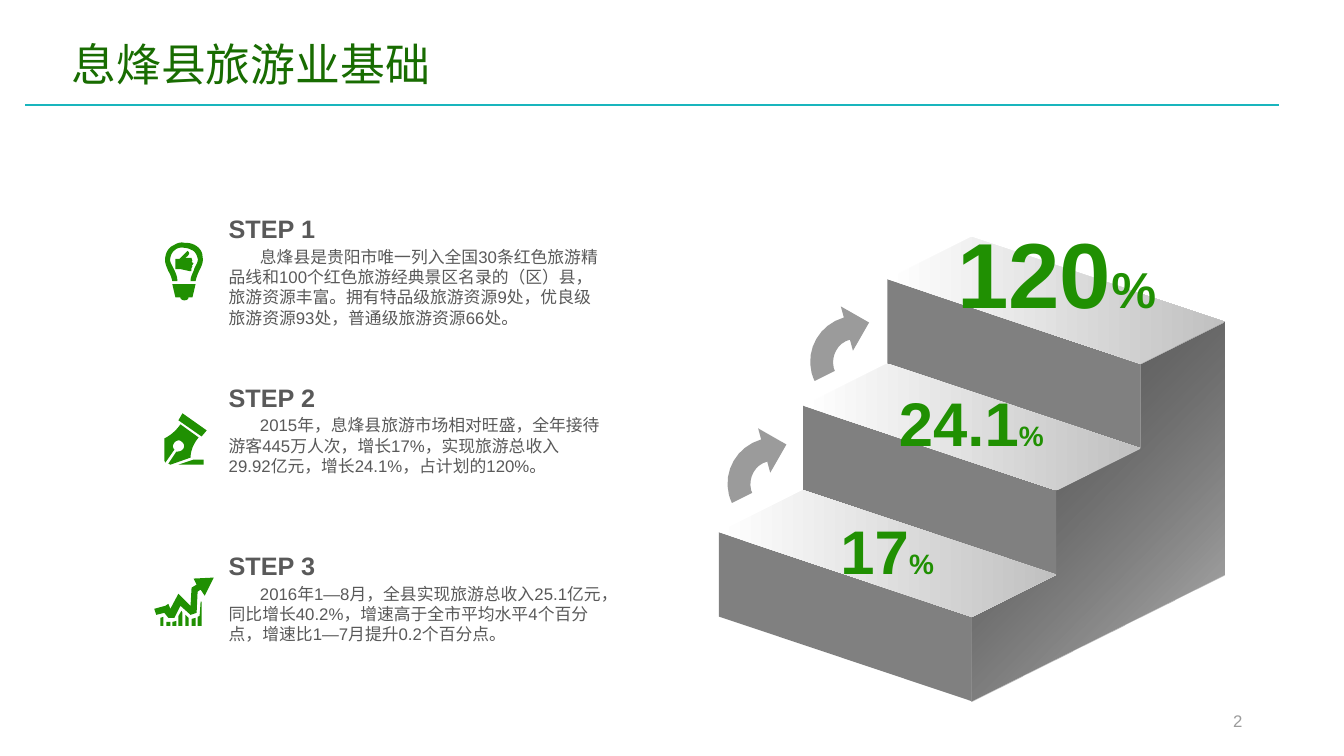
from lxml.etree import SubElement
from pptx import Presentation
from pptx.dml.color import RGBColor
from pptx.enum.shapes import MSO_CONNECTOR as Connector
from pptx.enum.text import MSO_ANCHOR as Anchor, PP_ALIGN as Align
from pptx.oxml.ns import qn
from pptx.util import Inches, Pt

COLORS = {
    "title": "186C01", "rule": "19B5BD", "green": "209002", "text": "595959",
    "riser": "808080", "arrow": "9B9B9B", "side": "595959", "side_end": "C2C2C2",
    "tread": "FFFFFF", "tread_end": "C0C0C0",
}
FONT = "Arial"
TITLE = "息烽县旅游业基础"
PAGE_NUMBER = "2"

STEPS = [
    ("STEP 1", "息烽县是贵阳市唯一列入全国30条红色旅游精品线和100个红色旅游经典景区名录的（区）县，"
               "旅游资源丰富。拥有特品级旅游资源9处，优良级旅游资源93处，普通级旅游资源66处。"),
    ("STEP 2", "2015年，息烽县旅游市场相对旺盛，全年接待游客445万人次，增长17%，"
               "实现旅游总收入29.92亿元，增长24.1%，占计划的120%。"),
    ("STEP 3", "2016年1—8月，全县实现旅游总收入25.1亿元，同比增长40.2%，"
               "增速高于全市平均水平4个百分点，增速比1—7月提升0.2个百分点。"),
]
FIGURES = [
    ("120", 66, 36, (9.38, 2.09, 2.2, 1.21)),
    ("24.1", 44, 20, (8.81, 3.77, 1.65, 0.84)),
    ("17", 44, 20, (8.23, 5.04, 1.14, 0.84)),
]

STAIR_COUNT = 3
STAIR_START = (7.13, 5.28)
STAIR_WIDTH = (2.51, 0.84)
STAIR_DEPTH = (0.836, -0.418)
STAIR_RISE = 0.837

ARROW = [
    (7.61, 4.58), (7.49, 4.61, 7.42, 4.74, 7.45, 4.86), (7.45, 4.87, 7.46, 4.88, 7.46, 4.89),
    (7.26, 4.99), (7.25, 4.97, 7.24, 4.94, 7.23, 4.91), (7.17, 4.67, 7.31, 4.43, 7.55, 4.36),
    (7.52, 4.25), (7.8, 4.41), (7.64, 4.69),
]
ARROW_SHIFTS = [(0, 0), (0.82, -1.21)]

BULB = [
    [(1.71, 2.82), (1.94, 2.82), (1.91, 2.95), (1.87, 2.95), (1.87, 2.97, 1.85, 2.98, 1.83, 2.98),
     (1.81, 2.98, 1.79, 2.97, 1.79, 2.95), (1.74, 2.95)],
    [(1.9, 2.56), (1.91, 2.59), (1.9, 2.6), (1.92, 2.61), (1.91, 2.63), (1.9, 2.63), (1.91, 2.64),
     (1.9, 2.66), (1.9, 2.69), (1.88, 2.69), (1.79, 2.67), (1.74, 2.67), (1.74, 2.57),
     (1.78, 2.57), (1.86, 2.49), (1.9, 2.51, 1.86, 2.55, 1.83, 2.56)],
    [(1.71, 2.79), (1.76, 2.79), (1.76, 2.74, 1.74, 2.7, 1.72, 2.66),
     (1.7, 2.62, 1.68, 2.59, 1.69, 2.56), (1.7, 2.51, 1.72, 2.49, 1.75, 2.47),
     (1.77, 2.46, 1.8, 2.45, 1.83, 2.46), (1.86, 2.46, 1.88, 2.47, 1.9, 2.48),
     (1.93, 2.49, 1.95, 2.52, 1.96, 2.56), (1.97, 2.59, 1.95, 2.62, 1.93, 2.66),
     (1.92, 2.7, 1.89, 2.74, 1.89, 2.79), (1.94, 2.79), (1.95, 2.75, 1.96, 2.72, 1.98, 2.68),
     (2, 2.64, 2.02, 2.6, 2.01, 2.55), (2.01, 2.49, 1.97, 2.45, 1.93, 2.43),
     (1.89, 2.41, 1.86, 2.41, 1.83, 2.41), (1.8, 2.4, 1.76, 2.41, 1.73, 2.43),
     (1.68, 2.45, 1.65, 2.49, 1.64, 2.55), (1.63, 2.6, 1.65, 2.64, 1.67, 2.69),
     (1.69, 2.72, 1.7, 2.75, 1.71, 2.79)],
]
PEN = [
    [(1.64, 4.59), (1.63, 4.57), (1.63, 4.35), (1.69, 4.32, 1.74, 4.28, 1.79, 4.21), (1.97, 4.34),
     (1.92, 4.4, 1.89, 4.47, 1.89, 4.54), (1.69, 4.61), (1.67, 4.6), (1.75, 4.48),
     (1.77, 4.48, 1.8, 4.48, 1.82, 4.45), (1.83, 4.43, 1.83, 4.4, 1.8, 4.38),
     (1.78, 4.36, 1.75, 4.37, 1.73, 4.39), (1.71, 4.42, 1.71, 4.44, 1.73, 4.46)],
    [(1.77, 4.61), (2.02, 4.61), (2.02, 4.56), (1.92, 4.56)],
    [(2, 4.33), (2.05, 4.27), (1.81, 4.1), (1.77, 4.17)],
]
GROWTH = [
    [(2.12, 5.73), (2.03, 5.91), (1.99, 5.85), (1.96, 5.87), (1.95, 6.08), (1.89, 6.1),
     (1.79, 6.01), (1.73, 6.13), (1.67, 6.13), (1.63, 6.08), (1.55, 6.1), (1.53, 6.04),
     (1.64, 6.01), (1.67, 5.99), (1.69, 6.04), (1.77, 5.89), (1.89, 6.01), (1.9, 5.83),
     (1.95, 5.8), (1.92, 5.74)],
    [(1.59, 6.21), (1.62, 6.21), (1.62, 6.12), (1.59, 6.13)],
    [(1.65, 6.21), (1.69, 6.21), (1.69, 6.17), (1.65, 6.17)],
    [(1.71, 6.21), (1.75, 6.21), (1.75, 6.16), (1.71, 6.17)],
    [(1.77, 6.21), (1.81, 6.21), (1.81, 6.08), (1.8, 6.06), (1.77, 6.11)],
    [(1.84, 6.21), (1.87, 6.21), (1.87, 6.13), (1.84, 6.1)],
    [(1.9, 6.21), (1.94, 6.21), (1.94, 6.13), (1.9, 6.14)],
    [(1.96, 6.21), (2, 6.21), (2, 5.97), (1.99, 5.97), (1.98, 6.11), (1.96, 6.12)],
]


def rgb(name):
    return RGBColor.from_string(COLORS[name])


def shift(point, *moves):
    return tuple(sum(values) for values in zip(point, *moves))


def flatten(outline, pieces=8):
    points = []
    for entry in outline:
        if len(entry) == 2:
            points.append(entry)
            continue
        controls = [points[-1], entry[:2], entry[2:4], entry[4:]]
        for index in range(1, pieces + 1):
            t = index / pieces
            weights = ((1 - t) ** 3, 3 * t * (1 - t) ** 2, 3 * t * t * (1 - t), t ** 3)
            points.append(tuple(sum(w * c[axis] for w, c in zip(weights, controls))
                                for axis in (0, 1)))
    return points


def add_outline(slide, outlines, color, end_color=None, angle=0, clear_start=False):
    builder = None
    for outline in outlines:
        points = [(Inches(x), Inches(y)) for x, y in flatten(outline)]
        if builder is None:
            builder = slide.shapes.build_freeform(*points[0])
        else:
            builder.move_to(*points[0])
        builder.add_line_segments(points[1:], close=True)
    shape = builder.convert_to_shape()
    shape.shadow.inherit = False
    shape.line.fill.background()
    if end_color is None:
        shape.fill.solid()
        shape.fill.fore_color.rgb = rgb(color)
        return
    shape.fill.gradient()
    shape.fill.gradient_angle = angle
    for stop, name in zip(shape.fill.gradient_stops, (color, end_color)):
        stop.color.rgb = rgb(name)
    if clear_start:
        first_color = next(shape.element.iter(qn("a:srgbClr")))
        SubElement(first_color, qn("a:alpha"), val="0")


def add_text(slide, box, runs, color, bold=False, wrap=False, align=Align.LEFT,
             anchor=Anchor.TOP, indent=0):
    frame = slide.shapes.add_textbox(*map(Inches, box)).text_frame
    frame.word_wrap = wrap
    frame.vertical_anchor = anchor
    paragraph = frame.paragraphs[0]
    paragraph.alignment = align
    if indent:
        properties = paragraph._p.get_or_add_pPr()
        properties.set("marL", "0")
        properties.set("indent", str(Inches(indent)))
    for text, size in runs:
        run = paragraph.add_run()
        run.text = text
        run.font.name = FONT
        run.font.size = Pt(size)
        run.font.bold = bold
        run.font.color.rgb = rgb(color)
    return paragraph


def add_stairs(slide):
    treads, risers, edge = [], [], []
    for index in range(STAIR_COUNT):
        left = shift(STAIR_START, (index * STAIR_DEPTH[0], index * (STAIR_DEPTH[1] - STAIR_RISE)))
        right = shift(left, STAIR_WIDTH)
        down = (0, STAIR_RISE)
        back = shift(right, STAIR_DEPTH)
        treads.append([left, right, back, shift(left, STAIR_DEPTH)])
        risers.append([left, right, shift(right, down), shift(left, down)])
        edge += [right, back]
    bottom = shift(edge[0], (0, STAIR_RISE))
    depth = [STAIR_COUNT * length for length in STAIR_DEPTH]
    side = [bottom, *edge, shift(bottom, depth)]
    add_outline(slide, [side], "side")
    for riser in risers:
        add_outline(slide, [riser], "riser")
    for tread in reversed(treads):
        add_outline(slide, [tread], "tread", "tread_end")
    add_outline(slide, [side], "side", "side_end", angle=315, clear_start=True)


def main():
    presentation = Presentation()
    presentation.slide_width, presentation.slide_height = Inches(13.33), Inches(7.5)
    slide = presentation.slides.add_slide(presentation.slide_layouts[6])

    rule = slide.shapes.add_connector(
        Connector.STRAIGHT, Inches(0.25), Inches(1.04), Inches(12.69), Inches(1.04))
    rule.line.color.rgb = rgb("rule")
    rule.line.width = Pt(1)
    SubElement(rule.element.spPr, qn("a:effectLst"))

    title = add_text(slide, (0.61, 0.18, 12.09, 0.77), [(TITLE, 32)], "title",
                     wrap=True, anchor=Anchor.BOTTOM)
    title.line_spacing = 0.9
    add_text(slide, (9.42, 6.95, 3, 0.4), [(PAGE_NUMBER, 12)], "arrow",
             wrap=True, align=Align.RIGHT, anchor=Anchor.MIDDLE)

    add_stairs(slide)
    for move in ARROW_SHIFTS:
        add_outline(slide, [[shift(e, move * (len(e) // 2)) for e in ARROW]], "arrow")
    for number, size, percent_size, box in FIGURES:
        add_text(slide, box, [(number, size), ("%", percent_size)], "green",
                 bold=True, align=Align.CENTER)

    for index, ((heading, body), icon) in enumerate(zip(STEPS, (BULB, PEN, GROWTH))):
        top = 2.07 + 1.67 * index
        add_outline(slide, icon, "green")
        add_text(slide, (2.17, top, 1.07, 0.4), [(heading, 18)], "text", bold=True)
        add_text(slide, (2.17, top + 0.33, 3.89, 0.9), [(body, 12)], "text",
                 wrap=True, indent=0.31)

    presentation.save("out.pptx")


if __name__ == "__main__":
    main()
